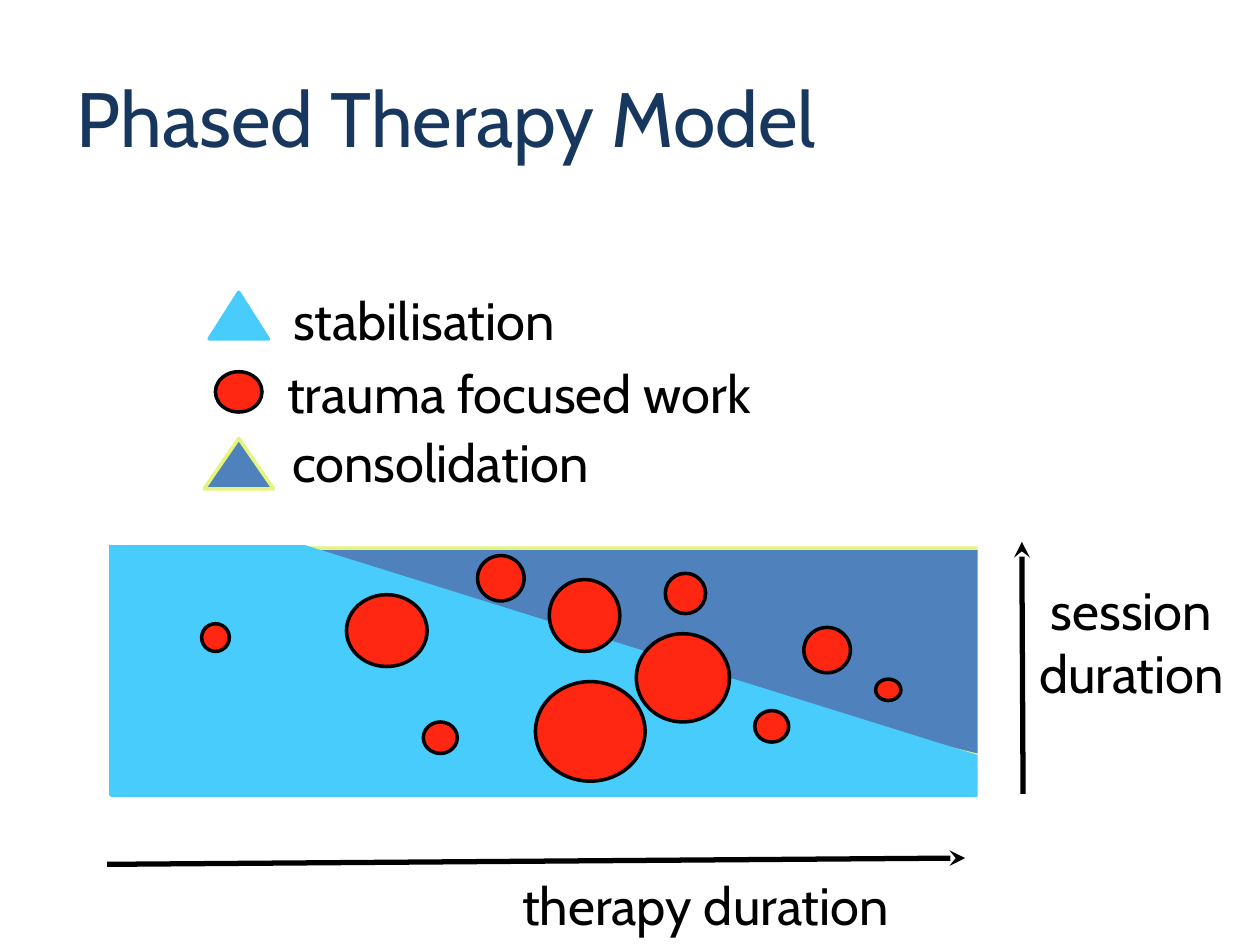
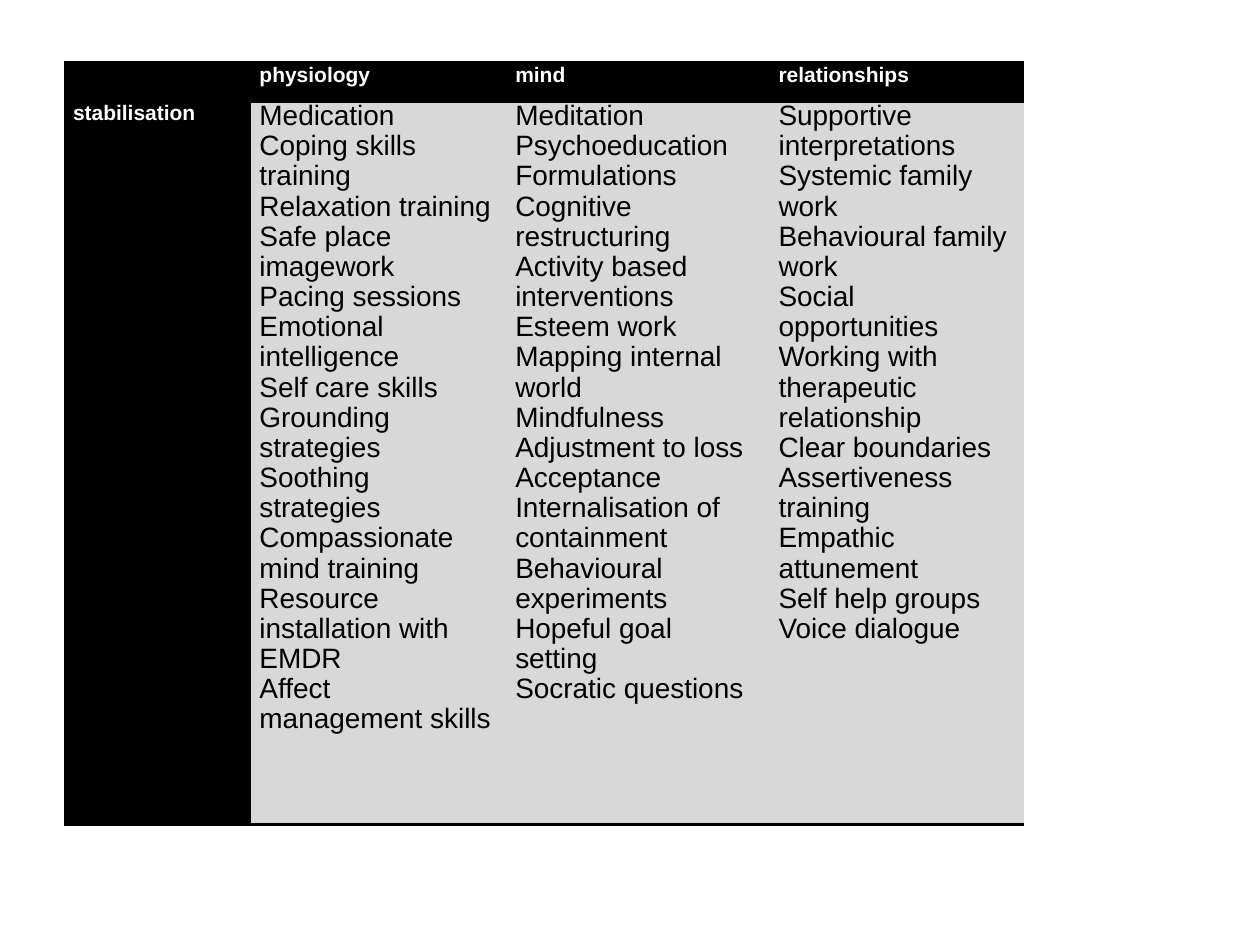
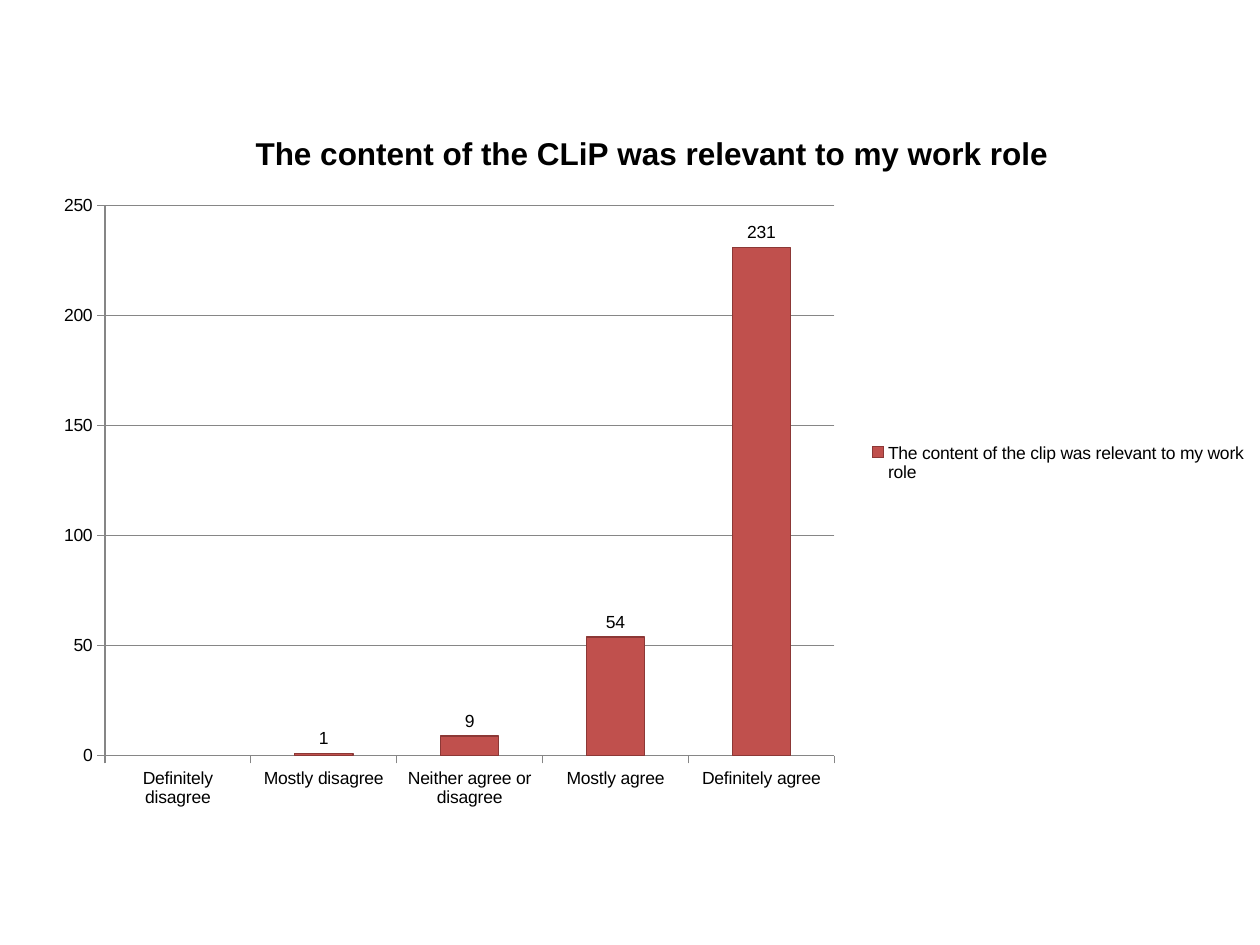
from lxml.etree import SubElement as Sub
from pptx import Presentation
from pptx.chart.data import CategoryChartData as Data
from pptx.dml.color import RGBColor
from pptx.enum.chart import XL_CHART_TYPE as Kind
from pptx.enum.chart import XL_LABEL_POSITION as Spot
from pptx.enum.chart import XL_LEGEND_POSITION as Side
from pptx.enum.chart import XL_TICK_MARK as Tick
from pptx.enum.shapes import MSO_CONNECTOR as Link
from pptx.enum.shapes import MSO_SHAPE as Form
from pptx.enum.text import MSO_ANCHOR as Anchor
from pptx.enum.text import MSO_AUTO_SIZE as Fit
from pptx.enum.text import PP_ALIGN as Align
from pptx.oxml import parse_xml
from pptx.oxml.ns import nsdecls, qn
from pptx.util import Inches, Pt

BLACK, WHITE, NAVY, GREY = "000000", "FFFFFF", "17375E", "D8D8D8"
SKY, BLUE, LIME, RED = "47CCFC", "4F81BD", "E6F37D", "FF2712"
BRICK, RUST, RULE = "C0504D", "8C3836", "868686"
PLAIN = "{2D5ABB26-0587-4C30-8999-92F81FD0307C}"
SIDES = ("margin_left", "margin_top", "margin_right", "margin_bottom")

HEADS = ["", "physiology", "mind", "relationships"]
LISTS = [
    ["stabilisation"],
    ["Medication", "Coping skills training", "Relaxation training",
     "Safe place imagework", "Pacing sessions", "Emotional intelligence",
     "Self care skills", "Grounding strategies", "Soothing strategies",
     "Compassionate mind training", "Resource installation with EMDR",
     "Affect management skills"],
    ["Meditation", "Psychoeducation", "Formulations",
     "Cognitive restructuring", "Activity based interventions",
     "Esteem work", "Mapping internal world", "Mindfulness",
     "Adjustment to loss", "Acceptance", "Internalisation of containment",
     "Behavioural experiments", "Hopeful goal setting",
     "Socratic questions"],
    ["Supportive interpretations", "Systemic family work",
     "Behavioural family work", "Social opportunities",
     "Working with therapeutic relationship", "Clear boundaries",
     "Assertiveness training", "Empathic attunement", "Self help groups",
     "Voice dialogue"],
]
ROLE = "The content of the {} was relevant to my work role"
VOTES = {"Definitely disagree": None, "Mostly disagree": 1,
         "Neither agree or disagree": 9, "Mostly agree": 54,
         "Definitely agree": 231}
EVENTS = [
    (1.6, 4.95, 0.22, 0.22), (2.75, 4.72, 0.64, 0.57),
    (3.36, 5.73, 0.27, 0.25), (3.79, 4.41, 0.37, 0.36),
    (4.25, 5.41, 0.87, 0.79), (4.36, 4.6, 0.56, 0.57),
    (5.05, 5.03, 0.74, 0.7), (5.28, 4.55, 0.32, 0.32),
    (5.99, 5.64, 0.27, 0.25), (6.38, 4.98, 0.37, 0.36),
    (6.95, 5.39, 0.2, 0.17),
]


def tint(code):
    """Turn a hex string into a colour."""
    return RGBColor.from_string(code)


def put(item, **vals):
    """Set each named value on an object."""
    for key, val in vals.items():
        setattr(item, key, val)


def box(*nums):
    """Turn numbers into lengths in inches."""
    return [Inches(num) for num in nums]


def ink(font, size, code, name="Arial", bold=False):
    """Format a font."""
    put(font, size=Pt(size), name=name, bold=bold)
    font.color.rgb = tint(code)


def pen(line, code, wide):
    """Format a line, or hide it when no colour is given."""
    if code is None:
        line.fill.background()
        return
    line.color.rgb = tint(code)
    line.width = Pt(wide)


def edge(cell, tag):
    """Draw a black border on one side of a cell."""
    cell._tc.get_or_add_tcPr().insert(0, parse_xml(
        f'<a:{tag} {nsdecls("a")} w="28575"><a:solidFill>'
        f'<a:srgbClr val="{BLACK}"/></a:solidFill></a:{tag}>'))


class Deck:
    """Hold the style and the current slide."""

    def __init__(self):
        """Start an empty deck."""
        self.show = Presentation()
        put(self.show, slide_width=Inches(10), slide_height=Inches(7.5))

    def page(self, lay=6):
        """Add a slide, blank unless a layout is given."""
        self.slide = self.show.slides.add_slide(self.show.slide_layouts[lay])
        self.items = self.slide.shapes

    def words(self, frame, lines, align=Align.LEFT, gap=None, **face):
        """Fill a text frame with one paragraph a line."""
        for num, text in enumerate(lines):
            para = frame.add_paragraph() if num else frame.paragraphs[0]
            put(para, alignment=align, line_spacing=gap)
            run = para.add_run()
            run.text = text
            ink(run.font, **face)

    def title(self, text):
        """Place and fill the title placeholder."""
        head = self.items.title
        put(head, **dict(zip(("left", "top", "width", "height"),
                             box(0.51, 0.3, 8.99, 1.25))))
        frame = head.text_frame
        put(frame, vertical_anchor=Anchor.MIDDLE,
            **dict(zip(SIDES, box(0.1, 0.05, 0.04, 0.05))))
        self.words(frame, [text], size=44, code=NAVY, name="Cabin")

    def label(self, spot, *lines, wrap=False):
        """Add centred diagram text."""
        frame = self.items.add_textbox(*box(*spot)).text_frame
        put(frame, word_wrap=wrap, vertical_anchor=Anchor.MIDDLE,
            auto_size=Fit.NONE if wrap else Fit.SHAPE_TO_FIT_TEXT,
            **dict.fromkeys(SIDES, 0))
        self.words(frame, lines, Align.CENTER, size=30, code=BLACK,
                   name="Cabin")

    def shape(self, form, spot, fill, line=None, turn=0):
        """Add a filled preset shape."""
        item = self.items.add_shape(form, *box(*spot))
        item.shadow.inherit = False
        item.rotation = turn
        item.fill.solid()
        item.fill.fore_color.rgb = tint(fill)
        pen(item.line, line, 2)

    def event(self, spot):
        """Add a red circle."""
        self.shape(Form.OVAL, spot, RED, BLACK)

    def arrow(self, *ends):
        """Add an arrow that points at its first end."""
        item = self.items.add_connector(Link.STRAIGHT, *box(*ends))
        pen(item.line, BLACK, 3)
        Sub(item.line._get_or_add_ln(), qn("a:headEnd"), type="stealth")
        Sub(item._element.spPr, qn("a:effectLst"))

    def table(self, spot, cols, rows, cells):
        """Add a table with a dark first row and column."""
        item = self.items.add_table(len(rows), len(cols), *box(*spot))
        grid = item.table
        grid._tbl.tblPr.find(qn("a:tableStyleId")).text = PLAIN
        for col, wide in zip(grid.columns, box(*cols)):
            col.width = wide
        for row, high in zip(grid.rows, box(*rows)):
            row.height = high
        for y, line in enumerate(cells):
            for x, texts in enumerate(line):
                cell, dark = grid.cell(y, x), y == 0 or x == 0
                put(cell, **dict(zip(SIDES, box(0.07, 0, 0.07, 0))))
                cell.fill.solid()
                cell.fill.fore_color.rgb = tint(BLACK if dark else GREY)
                for tag in ("lnB", "lnT"):
                    edge(cell, tag)
                self.words(cell.text_frame, texts, bold=dark,
                           gap=None if dark else 0.97,
                           size=12 if dark else 16,
                           code=WHITE if dark else BLACK)

    def chart(self, spot, area, head, name, votes):
        """Add a column chart with value labels."""
        data = Data()
        data.categories = list(votes)
        data.add_series(name, list(votes.values()))
        chart = self.items.add_chart(Kind.COLUMN_CLUSTERED, *box(*spot),
                                     data).chart
        ink(chart.font, 10, BLACK)
        self.words(chart.chart_title.text_frame, [head], Align.CENTER,
                   size=18, code=BLACK, bold=True)
        chart.has_legend = True
        put(chart.legend, position=Side.RIGHT, include_in_layout=False)
        plot = chart.plots[0]
        put(plot, gap_width=150, vary_by_categories=False,
            has_data_labels=True)
        put(plot.data_labels, show_value=True, position=Spot.OUTSIDE_END)
        bars = plot.series[0].format
        bars.fill.solid()
        bars.fill.fore_color.rgb = tint(BRICK)
        pen(bars.line, RUST, 0.75)
        for axis in (chart.category_axis, chart.value_axis):
            put(axis, major_tick_mark=Tick.OUTSIDE,
                minor_tick_mark=Tick.NONE)
            pen(axis.format.line, RULE, 0.75)
        put(chart.value_axis, has_major_gridlines=True, minimum_scale=0,
            maximum_scale=250, major_unit=50)
        pen(chart.value_axis.major_gridlines.format.line, RULE, 0.75)
        zone = chart._chartSpace.chart.plotArea
        for old in zone.findall(qn("c:layout")):
            zone.remove(old)
        marks = [("layoutTarget", "inner"), ("xMode", "edge"),
                 ("yMode", "edge"), *zip("xywh", area)]
        inner = "".join(f'<c:{tag} val="{val}"/>' for tag, val in marks)
        zone.insert(0, parse_xml(
            f'<c:layout {nsdecls("c")}><c:manualLayout>{inner}'
            '</c:manualLayout></c:layout>'))


def main():
    """Build the three slides."""
    deck = Deck()

    deck.page(5)
    deck.title("Phased Therapy Model")
    deck.shape(Form.RIGHT_TRIANGLE, (1.09, 4.35, 7.54, 1.86), BLUE, LIME, 180)
    deck.shape(Form.RIGHT_TRIANGLE, (0.88, 3.86, 7.85, 2.45), SKY, SKY)
    deck.shape(Form.RECTANGLE, (7.76, 4.14, 1.33, 2.34), WHITE)
    deck.shape(Form.RECTANGLE, (0.66, 3.97, 2.11, 0.34), WHITE, WHITE)
    deck.shape(Form.RIGHT_TRIANGLE, (0.57, 3.31, 0.98, 0.98), WHITE, WHITE)
    deck.shape(Form.ISOSCELES_TRIANGLE, (1.66, 2.32, 0.47, 0.37), SKY, SKY)
    deck.shape(Form.ISOSCELES_TRIANGLE, (1.62, 3.48, 0.55, 0.4), BLUE, LIME)
    deck.event((1.71, 2.95, 0.37, 0.32))
    deck.label((2.27, 2.28, 2.19, 0.51), "stabilisation")
    deck.label((2.17, 2.86, 3.9, 0.51), "trauma focused work")
    deck.label((2.27, 3.41, 2.45, 0.51), "consolidation")
    for spot in EVENTS:
        deck.event(spot)
    deck.arrow(8.11, 4.3, 8.12, 6.3)
    deck.label((8.22, 4.58, 1.52, 1.01), "session", "duration")
    deck.arrow(7.66, 6.81, 0.85, 6.86)
    deck.label((3.85, 6.9, 3.5, 0.56), "therapy duration", wrap=True)

    deck.page()
    heads = [[head] if head else [] for head in HEADS]
    deck.table((0.51, 0.5, 7.62, 6.04), (1.48, 2.03, 2.09, 2.02),
               (0.3, 5.74), [heads, LISTS])

    deck.page()
    deck.chart((0.35, 0.84, 9.65, 5.67), (0.05, 0.14, 0.6, 0.77),
               ROLE.format("CLiP"), ROLE.format("clip"), VOTES)

    deck.show.save("out.pptx")


if __name__ == "__main__":
    main()
